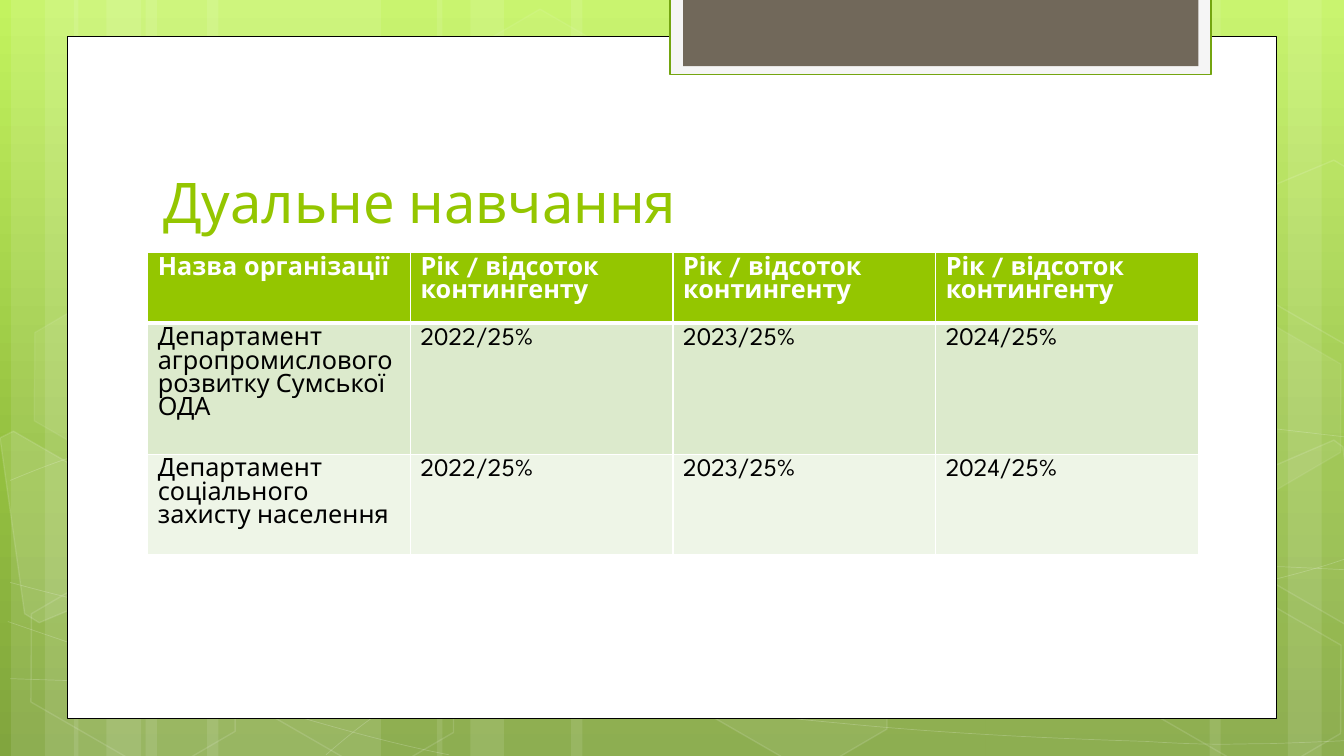
from copy import deepcopy
from dataclasses import dataclass

from lxml.etree import SubElement
from pptx import Presentation
from pptx.dml.color import RGBColor
from pptx.enum.shapes import MSO_SHAPE
from pptx.enum.text import MSO_ANCHOR
from pptx.oxml.ns import qn
from pptx.util import Inches, Pt


@dataclass(frozen=True)
class Theme:
    font: str = "League Spartan"
    title_size: int = 40
    table_size: int = 18
    accent: str = "94C600"
    white: str = "FFFFFF"
    black: str = "000000"
    tab: str = "F5F5F5"
    tab_line: str = "74A510"
    tab_core: str = "71685A"
    bands: tuple = ("DCEACC", "EEF5E7")
    sky: tuple = ((0, "C3F35F"), (0.62, "93BF3F"), (1, "81A53E"))


THEME = Theme()
COLUMNS, ROWS = 120, 67.5
WIDTH, HEIGHT = Inches(13.33), Inches(7.5)

# left column, width in columns
STRIPES = [(13, 21), (1, 6), (4, 10), (18.5, 21), (6.6, 6), (9.5, 10),
           (88, 21), (115, 6), (108, 10), (51, 37), (39, 6), (42, 10)]
# each curve: a start point, then three points for every cubic segment
CURVES = [
    [(0.9, 60.6), (7.4, 60.8), (13.9, 61.1), (22.9, 61), (31.9, 60.9), (42.9, 60.8),
     (54.9, 59.9), (67, 59), (84, 57.2), (95, 55.5), (106, 53.8), (117.3, 51.1),
     (120.9, 49.6)],
    [(0.9, 42.9), (4.3, 41.5), (7.7, 40.1), (14.6, 38.8), (21.4, 37.4), (31.1, 35.5),
     (41.7, 34.8), (52.4, 34.2), (65.3, 34.1), (78.5, 34.8), (91.7, 35.6), (113.7, 38.3),
     (120.9, 39.1)],
    [(0.7, 55.5), (15.2, 60.5), (29.7, 65.4), (40.1, 67.4)],
    [(0.9, 52), (4.6, 53), (8.4, 54), (15.4, 55.4), (22.3, 56.8), (32.8, 59),
     (42.8, 60.6), (52.7, 62.1), (65.4, 63.7), (75.3, 64.6), (85.3, 65.6), (95.9, 66),
     (102.3, 66.2), (108.6, 66.6), (110.3, 66.4), (113.4, 66.4), (116.5, 66.3),
     (118.7, 66.2), (120.9, 66.1)],
    [(29.1, 67.4), (31.2, 65.6), (33.3, 63.8), (36.3, 62.2), (39.2, 60.6), (43.2, 58.8),
     (46.5, 57.5), (49.9, 56.3), (51.9, 55.7), (56.3, 54.8), (60.8, 53.9), (68.9, 52.7),
     (73, 52), (77.2, 51.4), (77.9, 51.4), (81.6, 51.2), (85.3, 50.9), (91.2, 50.7),
     (95.3, 50.6), (99.5, 50.5), (106.4, 50.6), (106.4, 50.6), (109, 50.6), (111.7, 50.6),
     (114.3, 50.6), (116.6, 50.7), (118.5, 50.8), (120.7, 50.9)],
]
# left, top, fill opacity, line opacity
HEXAGONS = [(40, 3.2, 4, 8), (59.6, 53, 6, 12), (1.4, 53.2, None, 12), (1.7, 28.1, 7, 8),
            (20.9, 53.3, None, 12), (100.1, 53.4, None, 12), (100.1, 28.3, 7, 8)]
# outline, fill opacity
CUT_HEXAGONS = [
    ([(0, 39.1), (1.2, 38.5), (10.4, 43.8), (11.4, 52.3), (3.5, 55.6), (2.2, 54.8)], 10),
    ([(111.2, 42.7), (119.1, 39.3), (119.9, 39.9), (122.1, 56.3), (121.4, 56.5),
      (112.2, 51.2)], 4),
    ([(111.2, 17.6), (119.1, 14.3), (120.1, 14.9), (122.1, 31.1), (121.4, 31.5),
      (112.2, 26.2)], None),
]
ORGANISATIONS = [
    ["Назва організації"] + ["Рік / відсоток контингенту"] * 3,
    ["Департамент агропромислового розвитку Сумської ОДА",
     "2022/25%", "2023/25%", "2024/25%"],
    ["Департамент соціального захисту населення",
     "2022/25%", "2023/25%", "2024/25%"],
]


def col(n):
    return round(WIDTH * n / COLUMNS)


def row(n):
    return round(HEIGHT * n / ROWS)


def box(left, top, width, height):
    return col(left), row(top), col(width), row(height)


def paint(fill, color, opacity=None):
    fill.solid()
    fill.fore_color.rgb = RGBColor.from_string(color)
    if opacity is not None:
        srgb = fill._xPr.find(f"{qn('a:solidFill')}/{qn('a:srgbClr')}")
        SubElement(srgb, qn("a:alpha"), val=str(opacity * 1000))


def style(sp, fill=None, fill_opacity=None, line=None, line_opacity=None, weight=1):
    sp.shadow.inherit = False
    if fill:
        paint(sp.fill, fill, fill_opacity)
    else:
        sp.fill.background()
    if line:
        sp.line.width = Pt(weight)
        paint(sp.line.fill, line, line_opacity)
    else:
        sp.line.fill.background()


def add_preset(slide, kind, area, **look):
    sp = slide.shapes.add_shape(kind, *box(*area))
    style(sp, **look)
    return sp


def add_outline(slide, points, close, **look):
    start, *rest = [(col(x), row(y)) for x, y in points]
    builder = slide.shapes.build_freeform(*start)
    builder.add_line_segments(rest, close=close)
    sp = builder.convert_to_shape()
    style(sp, **look)
    return sp


def add_curve(slide, points, **look):
    """Draw an open outline and turn every three line steps into one cubic segment."""
    sp = add_outline(slide, points, False, **look)
    steps = list(sp.element.iter(qn("a:lnTo")))
    outline = steps[0].getparent()
    for i in range(0, len(steps), 3):
        cubic = SubElement(outline, qn("a:cubicBezTo"))
        for step in steps[i:i + 3]:
            cubic.append(step[0])
            outline.remove(step)


def write(tf, text, size, color, bold=False):
    tf.word_wrap = True
    r = tf.paragraphs[0].add_run()
    r.text = text
    r.font.name, r.font.size, r.font.bold = THEME.font, Pt(size), bold
    r.font.color.rgb = RGBColor.from_string(color)


def add_border(cell, side, weight):
    ln = SubElement(cell._tc.get_or_add_tcPr(), qn(f"a:ln{side}"), w=str(Pt(weight)))
    SubElement(SubElement(ln, qn("a:solidFill")), qn("a:srgbClr"), val=THEME.white)


def set_background(slide):
    fill = slide.background.fill
    fill.gradient()
    fill.gradient_angle = 270
    stops = slide.element.find(f".//{qn('a:gsLst')}")
    stops.append(deepcopy(stops[-1]))
    for stop, (position, color) in zip(fill.gradient_stops, THEME.sky):
        stop.position = position
        stop.color.rgb = RGBColor.from_string(color)


def add_backdrop(slide):
    white = THEME.white
    for left, width in STRIPES:
        add_preset(slide, MSO_SHAPE.RECTANGLE, (left, 0, width, ROWS),
                   fill=white, fill_opacity=10)
    for points in CURVES:
        add_curve(slide, points, line=white, line_opacity=20, weight=0.5)
    for left, top, opacity, line_opacity in HEXAGONS:
        sp = add_preset(slide, MSO_SHAPE.HEXAGON, (left, top, 21, 13.7),
                        fill=white if opacity else None, fill_opacity=opacity,
                        line=white, line_opacity=line_opacity)
        sp.adjustments[0] = 0.285
        sp.rotation = 30
    for points, opacity in CUT_HEXAGONS:
        add_outline(slide, points, True, fill=white if opacity else None,
                    fill_opacity=opacity, line=white, line_opacity=12)


def add_frame(slide):
    rect = MSO_SHAPE.RECTANGLE
    add_preset(slide, rect, (6, 3.25, 108, 60.85),
               fill=THEME.white, line=THEME.black, weight=0.5)
    add_preset(slide, rect, (59.85, -0.2, 48.25, 6.85),
               fill=THEME.tab, line=THEME.tab_line, weight=1.25)
    add_preset(slide, rect, (61, -0.2, 46, 6.1), fill=THEME.tab_core)


def add_title(slide, text):
    tf = slide.shapes.add_textbox(*box(13.7, 10.1, 92.2, 11.3)).text_frame
    tf.vertical_anchor = MSO_ANCHOR.BOTTOM
    write(tf, text, THEME.title_size, THEME.accent)


def add_banded_table(slide, rows, area, heights):
    """Rows start at their least heights and grow with their text."""
    frame = slide.shapes.add_table(len(rows), len(rows[0]), *box(*area))
    table = frame.table
    for i, (texts, height) in enumerate(zip(rows, heights)):
        table.rows[i].height = row(height)
        head = i == 0
        for j, text in enumerate(texts):
            cell = table.cell(i, j)
            for side in "LRTB":
                heavy = (i, side) in ((0, "B"), (1, "T"))
                add_border(cell, side, 3 if heavy else 1)
            paint(cell.fill, THEME.accent if head else THEME.bands[(i - 1) % 2])
            write(cell.text_frame, text, THEME.table_size,
                  THEME.white if head else THEME.black, bold=head)
    frame.height = row(area[3])


def main():
    prs = Presentation()
    prs.slide_width, prs.slide_height = WIDTH, HEIGHT
    slide = prs.slides.add_slide(prs.slide_layouts[6])
    set_background(slide)
    add_backdrop(slide)
    add_frame(slide)
    add_title(slide, "Дуальне навчання")
    add_banded_table(slide, ORGANISATIONS, (13.2, 22.55, 93.8, 29.7), (5.4, 3.65, 3.65))
    prs.save("out.pptx")


if __name__ == "__main__":
    main()
